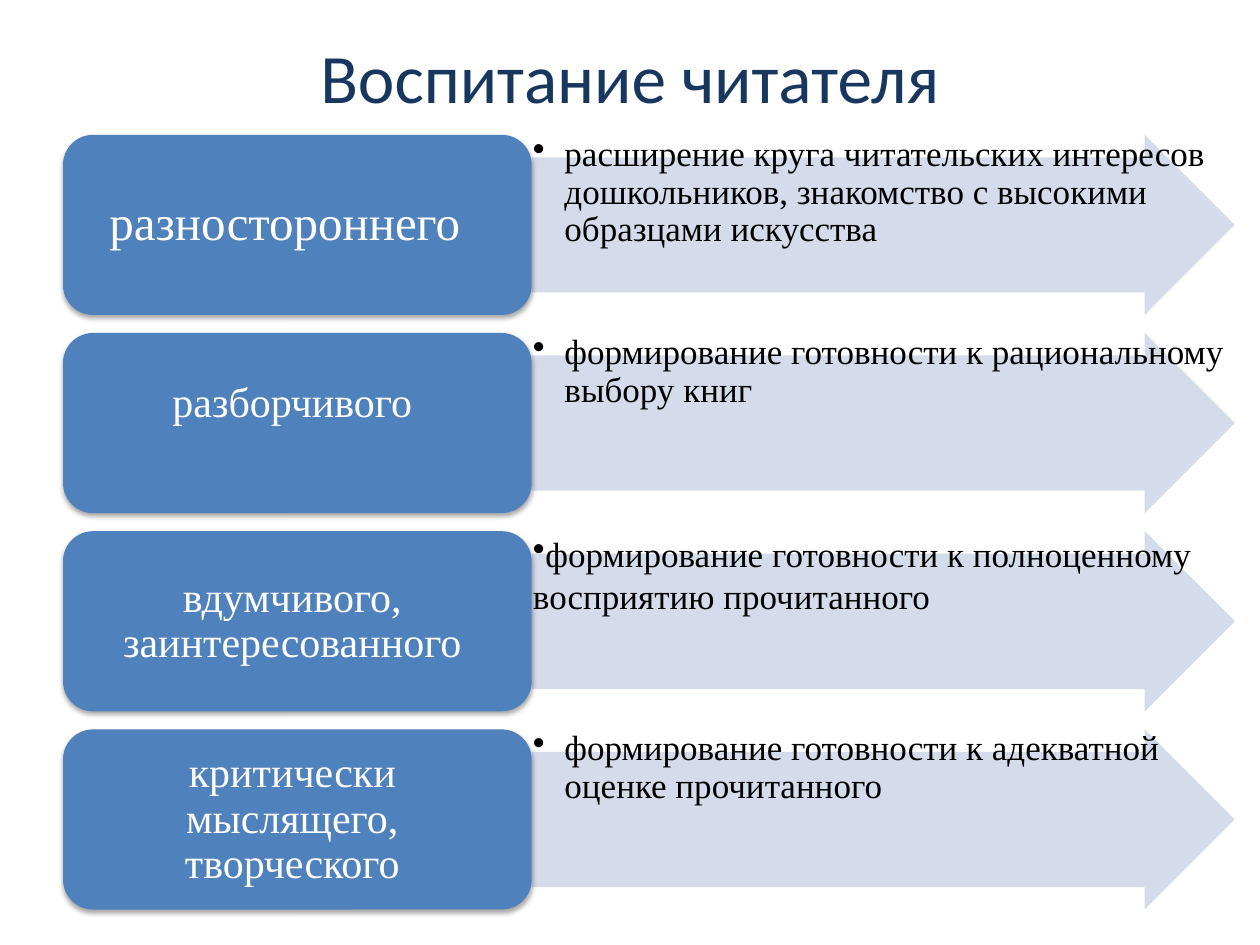
from lxml import etree
from pptx import Presentation, util as u
from pptx.dml.color import RGBColor
from pptx.enum import shapes, text
from pptx.oxml import ns


def paint(color, hex_code):
    color.rgb = RGBColor.from_string(hex_code)


def add_xml(parent, tag, **attributes):
    return etree.SubElement(parent, ns.qn(tag), **attributes)


deck = Presentation()
deck.slide_width, deck.slide_height = u.Inches(10), u.Inches(7.5)
slide = deck.slides.add_slide(deck.slide_layouts[5])

heading = slide.shapes.title
heading.left, heading.top = u.Inches(0.5), u.Inches(0.3)
heading.width, heading.height = u.Inches(9), u.Inches(0.61)
heading.text_frame.text = "Воспитание читателя"
heading.text_frame.vertical_anchor = text.MSO_ANCHOR.MIDDLE
title_line = heading.text_frame.paragraphs[0]
title_line.alignment = text.PP_ALIGN.CENTER
title_line.font.name, title_line.font.size = "Calibri", u.Pt(39.6)
paint(title_line.font.color, "17375E")

left, top = u.Inches(0.5), u.Inches(1.07)
quality_width, goal_width = u.Inches(3.72), u.Inches(5.58)
row_height = u.Inches(1.43)
row_step = row_height * 1.1
goal_left = left + quality_width

rows = [
    ("разностороннего", 28, 0.25, 0.05, 0.25, 0.9,
     "расширение круга читательских интересов дошкольников, знакомство с высокими образцами искусства"),
    ("разборчивого", 24, 0.13, 0.35, 0.25, 0.9,
     "формирование готовности к рациональному выбору книг"),
    ("вдумчивого, заинтересованного", 24, 0.13, 0.05, 0, 1,
     "формирование готовности к полноценному восприятию прочитанного"),
    ("критически мыслящего, творческого", 24, 0.13, 0.05, 0.25, 0.9,
     "формирование готовности к адекватной оценке прочитанного"),
]

for row, (quality, size, right_inset, bottom_inset, indent, spacing, goal) in enumerate(rows):
    y = round(top + row * row_step)

    arrow = slide.shapes.add_shape(
        shapes.MSO_SHAPE.RIGHT_ARROW, goal_left, y, goal_width, row_height)
    arrow.adjustments[0], arrow.adjustments[1] = 0.75, 0.5
    arrow.shadow.inherit = False
    arrow.line.fill.background()
    arrow.fill.solid()
    paint(arrow.fill.fore_color, "D0D8E8")
    tint = arrow.fill._xPr.find(ns.qn("a:solidFill"))[0]
    add_xml(tint, "a:alpha", val="90000")

    goal_frame = slide.shapes.add_textbox(goal_left, y, goal_width, row_height).text_frame
    goal_frame.word_wrap = True
    goal_frame.margin_left = goal_frame.margin_right = u.Inches(0.01)
    goal_frame.margin_top = goal_frame.margin_bottom = u.Inches(0.01)
    goal_frame.text = goal
    goal_line = goal_frame.paragraphs[0]
    goal_line.line_spacing = spacing
    properties = goal_line._p.get_or_add_pPr()
    properties.set("marL", str(u.Inches(indent)))
    properties.set("indent", str(-u.Inches(indent)))
    add_xml(properties, "a:buChar", char="•")
    goal_line.font.name, goal_line.font.size = "Times New Roman", u.Pt(20)
    paint(goal_line.font.color, "000000")

    card = slide.shapes.add_shape(
        shapes.MSO_SHAPE.ROUNDED_RECTANGLE, left, y, quality_width, row_height)
    card.line.fill.background()
    card.fill.solid()
    paint(card.fill.fore_color, "4F81BD")
    card.shadow.inherit = False
    effects = card._element.spPr.find(ns.qn("a:effectLst"))
    shadow = add_xml(effects, "a:outerShdw", blurRad=str(u.Pt(3.1)), dist=str(u.Pt(1.8)),
                     dir="5400000", rotWithShape="0")
    add_xml(add_xml(shadow, "a:srgbClr", val="000000"), "a:alpha", val="35000")

    quality_frame = card.text_frame
    quality_frame.word_wrap = True
    quality_frame.vertical_anchor = text.MSO_ANCHOR.MIDDLE
    quality_frame.margin_left, quality_frame.margin_right = u.Inches(0.05), u.Inches(right_inset)
    quality_frame.margin_top, quality_frame.margin_bottom = u.Inches(0.05), u.Inches(bottom_inset)
    quality_frame.text = quality
    quality_line = quality_frame.paragraphs[0]
    quality_line.alignment = text.PP_ALIGN.CENTER
    quality_line.line_spacing = 0.9
    quality_line.font.name, quality_line.font.size = "Times New Roman", u.Pt(size)
    paint(quality_line.font.color, "FFFFFF")

deck.save("out.pptx")
